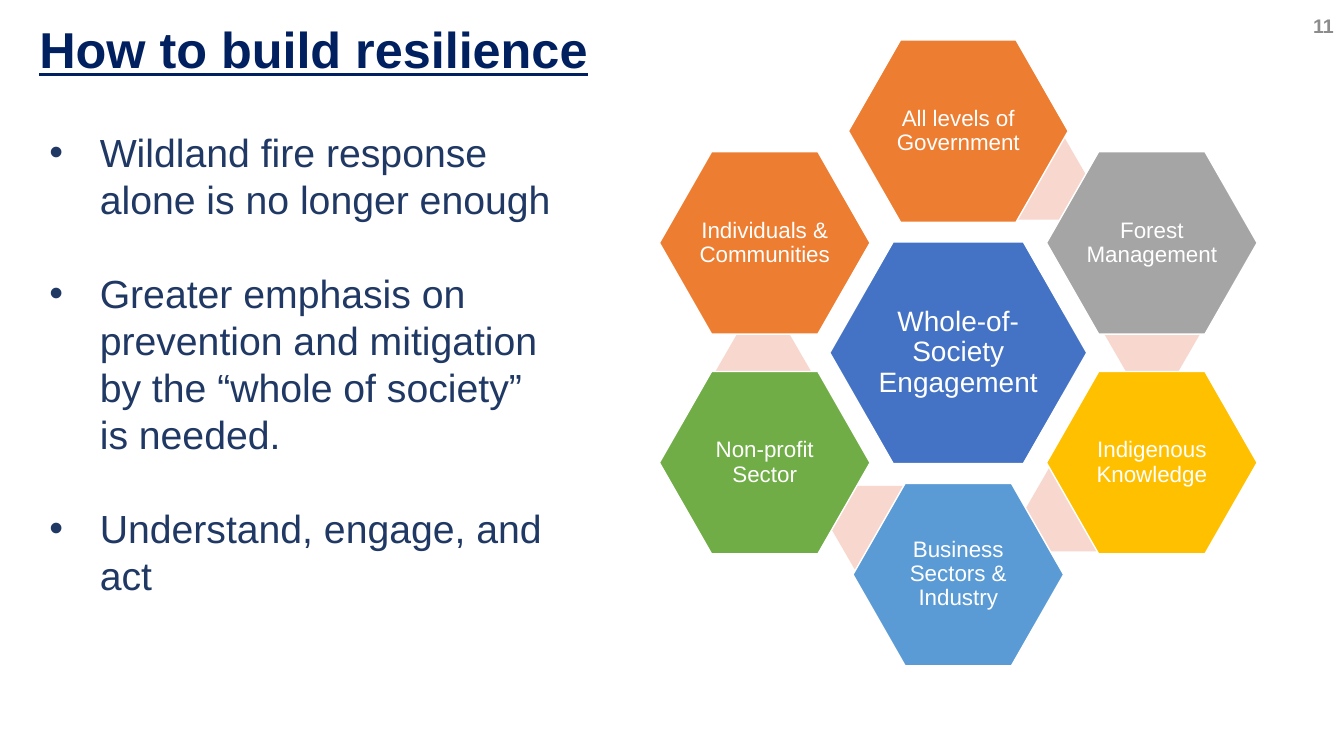
from typing import NamedTuple

from lxml import etree
from pptx import Presentation
from pptx.dml.color import RGBColor
from pptx.enum.shapes import MSO_SHAPE
from pptx.enum.text import MSO_ANCHOR, MSO_AUTO_SIZE, PP_ALIGN
from pptx.oxml.ns import qn
from pptx.shapes.autoshape import Shape
from pptx.slide import Slide
from pptx.util import Pt

HEXAGON = MSO_SHAPE.HEXAGON
MIDDLE, TOP, BOTTOM = MSO_ANCHOR.MIDDLE, MSO_ANCHOR.TOP, MSO_ANCHOR.BOTTOM
LEFT, CENTER, RIGHT = PP_ALIGN.LEFT, PP_ALIGN.CENTER, PP_ALIGN.RIGHT
NO_AUTOFIT = MSO_AUTO_SIZE.NONE

FONT = "Arial"
WHITE = RGBColor(0xFF, 0xFF, 0xFF)
GRAY_TEXT = RGBColor(0x8C, 0x8C, 0x8C)
NAVY = RGBColor(0x00, 0x20, 0x60)
DARK_BLUE = RGBColor(0x20, 0x38, 0x64)
BLUE = RGBColor(0x44, 0x72, 0xC4)
ORANGE = RGBColor(0xED, 0x7D, 0x31)
GRAY = RGBColor(0xA5, 0xA5, 0xA5)
GOLD = RGBColor(0xFF, 0xC0, 0x00)
LIGHT_BLUE = RGBColor(0x5B, 0x9B, 0xD5)
GREEN = RGBColor(0x70, 0xAD, 0x47)
PINK = RGBColor(0xF8, 0xD7, 0xCE)

HUB_X, HUB_Y = 684.5, 252
COLUMN, ROW, POLE = 138.25, 78.5, 158.4
CELL_WIDTH, CELL_HEIGHT = 150.5, 130.3
LINK_WIDTH, LINK_HEIGHT = 69.1, 59.8

POINTS = [
    "Wildland fire response alone is no longer enough",
    "Greater emphasis on prevention and mitigation by the “whole of society” is needed.",
    "Understand, engage, and act",
]


class Cell(NamedTuple):
    text: str
    color: RGBColor
    dx: float = 0
    dy: float = 0
    width: float = CELL_WIDTH
    height: float = CELL_HEIGHT
    size: float = 16
    margin: float = 1.6


class Link(NamedTuple):
    dx: float
    dy: float


HONEYCOMB: list[Cell | Link] = [
    Cell("Whole-of-Society Engagement", BLUE, width=183.6, height=158.4, size=20, margin=2),
    Link(57.9, -125),
    Cell("All levels of Government", ORANGE, dy=-POLE, width=157),
    Link(138.5, -14),
    Cell("Forest Management", GRAY, COLUMN, -ROW),
    Link(82.3, 112),
    Cell("Indigenous Knowledge", GOLD, COLUMN, ROW),
    Link(-56.6, 125),
    Cell("Business Sectors & Industry", LIGHT_BLUE, dy=POLE),
    Link(-139.3, 14),
    Cell("Non-profit Sector", GREEN, -COLUMN, ROW),
    Cell("Individuals & Communities", ORANGE, -COLUMN, -ROW),
]


def place(shape: Shape, left: float, top: float, width: float, height: float) -> None:
    shape.left, shape.top = Pt(left), Pt(top)
    shape.width, shape.height = Pt(width), Pt(height)


def set_font(paragraph, size: float, color: RGBColor, bold: bool = False) -> None:
    font = paragraph.font
    font.name, font.size, font.bold = FONT, Pt(size), bold
    font.color.rgb = color


def add_hexagon(slide: Slide, dx: float, dy: float, width: float, height: float,
                color: RGBColor, adjustment: float) -> Shape:
    shape = slide.shapes.add_shape(
        HEXAGON, Pt(HUB_X + dx - width / 2), Pt(HUB_Y + dy - height / 2),
        Pt(width), Pt(height))
    shape.adjustments[0] = adjustment
    shape.shadow.inherit = False
    shape.fill.solid()
    shape.fill.fore_color.rgb = color
    return shape


def add_link(slide: Slide, link: Link) -> None:
    shape = add_hexagon(slide, link.dx, link.dy, LINK_WIDTH, LINK_HEIGHT, PINK, 0.289)
    shape.line.fill.background()


def add_cell(slide: Slide, cell: Cell) -> None:
    shape = add_hexagon(slide, cell.dx, cell.dy, cell.width, cell.height, cell.color, 0.286)
    shape.line.color.rgb = WHITE
    shape.line.width = Pt(1)
    frame = shape.text_frame
    frame.word_wrap = True
    frame.vertical_anchor = MIDDLE
    frame.margin_left = frame.margin_right = Pt(cell.margin)
    frame.margin_top = frame.margin_bottom = Pt(cell.margin)
    paragraph = frame.paragraphs[0]
    paragraph.text = cell.text
    paragraph.alignment = CENTER
    paragraph.line_spacing = 0.9
    set_font(paragraph, cell.size, WHITE)


def add_title(slide: Slide) -> None:
    title = slide.shapes.title
    place(title, 28.1, -2.9, 887, 63.4)
    frame = title.text_frame
    frame.auto_size = NO_AUTOFIT
    frame.vertical_anchor = BOTTOM
    frame.margin_left = 0
    paragraph = frame.paragraphs[0]
    paragraph.text = "How to build resilience"
    paragraph.alignment = LEFT
    paragraph.line_spacing = 0.9
    set_font(paragraph, 36, NAVY, bold=True)
    paragraph.font.underline = True


def add_points(slide: Slide) -> None:
    body = slide.placeholders[1]
    place(body, 28.1, 87.8, 378, 414.7)
    frame = body.text_frame
    frame.auto_size = NO_AUTOFIT
    frame.vertical_anchor = TOP
    for index, text in enumerate(POINTS):
        paragraph = frame.add_paragraph() if index else frame.paragraphs[0]
        paragraph.text = text
        properties = paragraph._p.get_or_add_pPr()
        properties.set("marL", str(Pt(36)))
        properties.set("indent", str(Pt(-36)))
        etree.SubElement(properties, qn("a:buFont"), typeface=FONT)
        etree.SubElement(properties, qn("a:buChar"), char="•")
        paragraph.line_spacing = 1.0
        paragraph.space_before = Pt(33.6 if index else 0)
        set_font(paragraph, 28, DARK_BLUE)


def add_slide_number(slide: Slide) -> None:
    box = slide.shapes.add_textbox(Pt(924.5), Pt(0), Pt(35.3), Pt(36))
    frame = box.text_frame
    frame.word_wrap = True
    frame.vertical_anchor = MIDDLE
    paragraph = frame.paragraphs[0]
    paragraph.text = "11"
    paragraph.alignment = RIGHT
    set_font(paragraph, 14, GRAY_TEXT, bold=True)


def main() -> None:
    presentation = Presentation()
    presentation.slide_width, presentation.slide_height = Pt(960), Pt(540)
    slide = presentation.slides.add_slide(presentation.slide_layouts[1])
    add_slide_number(slide)
    add_title(slide)
    add_points(slide)
    for item in HONEYCOMB:
        if isinstance(item, Cell):
            add_cell(slide, item)
        else:
            add_link(slide, item)
    presentation.save("out.pptx")


if __name__ == "__main__":
    main()
